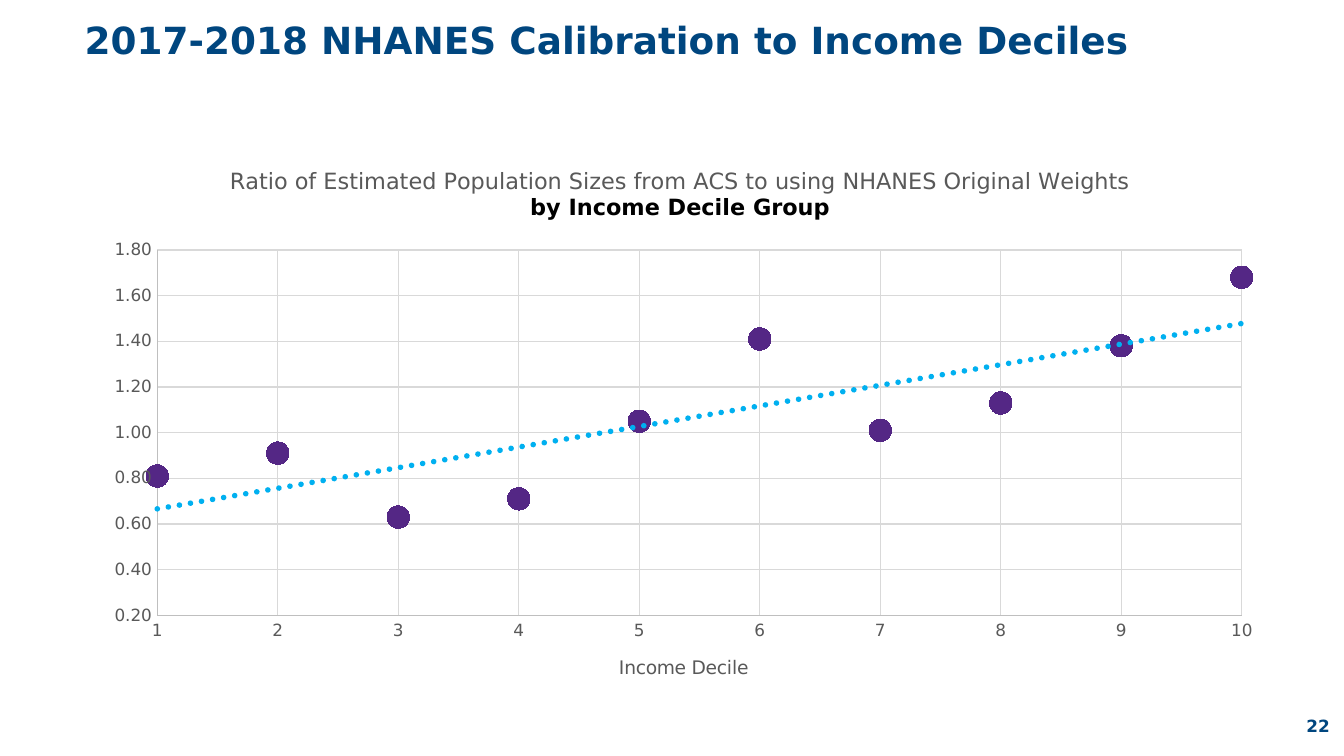
from lxml import etree
from pptx import Presentation
from pptx import util as u
from pptx.chart.data import XyChartData
from pptx.dml.color import RGBColor
from pptx.enum import chart as ch, text
from pptx.oxml import parse_xml
from pptx.oxml.ns import nsdecls, qn

W = 10
H = W * 9 / 16
CHART_W, CHART_H = 8.82, 4.19
FONT = "DejaVu Sans"
NAVY, PURPLE, CYAN = "00467F", "542785", "00B0F0"
GRAY, AXIS, GRID = "595959", "BFBFBF", "D9D9D9"
RATIOS = [0.81, 0.91, 0.63, 0.71, 1.05, 1.41, 1.01, 1.13, 1.38, 1.68]


def rgb(value):
    return RGBColor.from_string(value)


def set_font(font, size, color, bold=False):
    for name, value in dict(name=FONT, size=u.Pt(size), bold=bold).items():
        setattr(font, name, value)
    font.color.rgb = rgb(color)


def set_line(line, color, width=0.75):
    line.color.rgb = rgb(color)
    line.width = u.Pt(width)


def place(sp, left, top, width, height):
    for name, value in dict(left=left, top=top, width=width, height=height).items():
        setattr(sp, name, u.Inches(value))


def add_title(slide, words):
    sp = slide.shapes.title
    place(sp, 0.53, 0, 9.17, 0.63)
    tf = sp.text_frame
    tf.text = words
    tf.vertical_anchor = text.MSO_ANCHOR.MIDDLE
    p = tf.paragraphs[0]
    p.alignment = text.PP_ALIGN.LEFT
    p.line_spacing = 0.9
    set_font(p.runs[0].font, 20, NAVY, True)


def add_page_number(slide, number):
    sp = slide.shapes.add_textbox(0, 0, 0, 0)
    place(sp, 9.72, 5.25, 0.35, 0.3)
    tf = sp.text_frame
    tf.word_wrap = True
    tf.margin_left = 0
    tf.vertical_anchor = text.MSO_ANCHOR.MIDDLE
    tf.text = number
    set_font(tf.paragraphs[0].runs[0].font, 9, NAVY, True)


def set_layout(element, index, x, y, w=None, h=None):
    """Place a chart part, given in inches from the chart's corner."""
    for old in element.findall(qn("c:layout")):
        element.remove(old)
    layout = parse_xml(f"<c:layout {nsdecls('c')}><c:manualLayout/></c:layout>")
    values = dict(xMode="edge", yMode="edge", x=x / CHART_W, y=y / CHART_H)
    if w and h:
        values = dict(layoutTarget="inner", **values, w=w / CHART_W, h=h / CHART_H)
    for name, value in values.items():
        etree.SubElement(layout[0], qn(f"c:{name}")).set("val", str(value))
    element.insert(index, layout)


def fill_title(title, lines, x, y):
    """Write one paragraph for each (words, size, color, bold)."""
    tf = title.text_frame
    for i, (words, *style) in enumerate(lines):
        p = tf.add_paragraph() if i else tf.paragraphs[0]
        r = p.add_run()
        r.text = words
        set_font(r.font, *style)
    set_layout(title._element, 1, x, y)


def format_axis(axis, low, high, step, number_format):
    scale = dict(minimum_scale=low, maximum_scale=high, major_unit=step,
                 has_major_gridlines=True,
                 major_tick_mark=ch.XL_TICK_MARK.NONE,
                 minor_tick_mark=ch.XL_TICK_MARK.NONE)
    for name, value in scale.items():
        setattr(axis, name, value)
    axis.tick_labels.number_format = number_format
    axis.tick_labels.number_format_is_linked = False
    set_font(axis.tick_labels.font, 9, GRAY)
    set_line(axis.format.line, AXIS)
    set_line(axis.major_gridlines.format.line, GRID)


def format_markers(series):
    series.format.line.fill.background()
    marker = series.marker
    marker.style = ch.XL_MARKER_STYLE.CIRCLE
    marker.size = 12
    marker.format.fill.solid()
    marker.format.fill.fore_color.rgb = rgb(PURPLE)
    set_line(marker.format.line, PURPLE)


def add_trendline(series):
    trend = parse_xml(
        f'<c:trendline {nsdecls("c", "a")}><c:spPr><a:ln w="{u.Pt(3)}" cap="rnd">'
        f'<a:solidFill><a:srgbClr val="{CYAN}"/></a:solidFill>'
        '<a:prstDash val="sysDot"/></a:ln></c:spPr>'
        '<c:trendlineType val="linear"/><c:dispRSqr val="0"/><c:dispEq val="0"/>'
        '</c:trendline>')
    series._element.find(qn("c:xVal")).addprevious(trend)


def add_ratio_chart(slide):
    data = XyChartData()
    points = data.add_series("Series 1")
    for decile, ratio in enumerate(RATIOS, 1):
        points.add_data_point(decile, ratio)
    box = map(u.Inches, (0.68, 1.07, CHART_W, CHART_H))
    chart = slide.shapes.add_chart(ch.XL_CHART_TYPE.XY_SCATTER, *box, data).chart
    set_font(chart.font, 10, "000000")
    chart.has_legend = False
    chart.plots[0].vary_by_categories = False
    fill_title(chart.chart_title, [
        ("Ratio of Estimated Population Sizes from ACS to using NHANES Original Weights",
         12, GRAY),
        ("by Income Decile Group", 12, "000000", True)], x=1, y=0.13)
    format_axis(chart.category_axis, 1, 10, 1, "0")
    format_axis(chart.value_axis, 0.2, 1.8, 0.2, "0.00")
    fill_title(chart.category_axis.axis_title, [("Income Decile", 10, GRAY)],
               x=3.9, y=3.78)
    plot_area = chart._chartSpace.chart.plotArea
    set_layout(plot_area, 0, x=0.49, y=0.79, w=8.07, h=2.72)
    series = chart.plots[0].series[0]
    series.smooth = False
    format_markers(series)
    add_trendline(series)


def main():
    prs = Presentation()
    prs.slide_width, prs.slide_height = u.Inches(W), u.Inches(H)
    slide = prs.slides.add_slide(prs.slide_layouts[5])
    add_title(slide, "2017-2018 NHANES Calibration to Income Deciles")
    add_page_number(slide, "22")
    add_ratio_chart(slide)
    prs.save("out.pptx")


if __name__ == "__main__":
    main()
